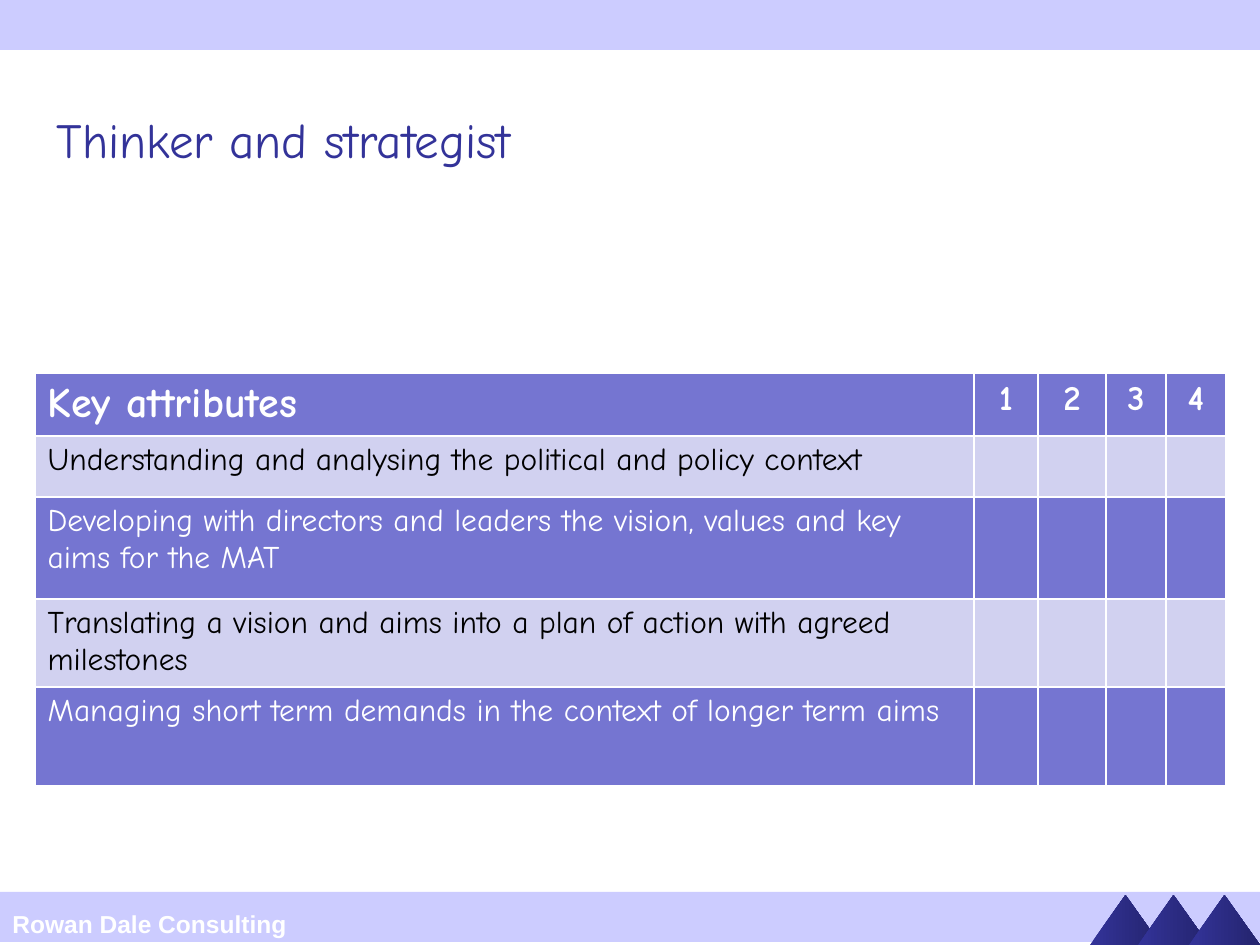
from dataclasses import dataclass

from lxml.etree import SubElement as Sub
from pptx import Presentation as Deck
from pptx.dml.color import RGBColor as Rgb
from pptx.enum.shapes import MSO_SHAPE as Kind
from pptx.enum.text import MSO_ANCHOR as Anchor, MSO_AUTO_SIZE as Fit, PP_ALIGN as Align
from pptx.oxml.ns import qn
from pptx.util import Pt

PX = 914400 / 126


@dataclass(frozen=True)
class Theme:
    white: str = "FFFFFF"
    black: str = "000000"
    navy: str = "333399"
    deep: str = "24246D"
    band: str = "CCCCFF"
    dark: str = "7575D1"
    pale: str = "D1D1F0"
    face: str = "Comic Neue"
    plain: str = "Arial"
    title: int = 28
    head: int = 24
    mark: int = 20
    body: int = 18
    foot: int = 14


LOOK = Theme()
COLS = [939, 64, 68, 60, 60]
ROWS = [60, 61, 102, 85, 99]
MARKS = ["1", "2", "3", "4"]
ITEMS = [
    "Understanding and analysing the political and policy context",
    "Developing with directors and leaders the vision, values and key aims for the MAT",
    "Translating a vision and aims into a plan of action with agreed milestones",
    "Managing short term demands in the context of longer term aims",
]


def px(n):
    return round(n * PX)


def box(*nums):
    return [px(n) for n in nums]


def put(obj, vals):
    for key, val in vals.items():
        setattr(obj, key, val)


def write(frame, text, size, tint, face=LOOK.face, bold=False, align=Align.LEFT):
    para = frame.paragraphs[0]
    para.alignment = align
    run = para.add_run()
    run.text = text
    put(run.font, {"name": face, "size": Pt(size), "bold": bold})
    run.font.color.rgb = Rgb.from_string(tint)


def add_shape(slide, kind, *area):
    shape = slide.shapes.add_shape(kind, *box(*area))
    shape.shadow.inherit = False
    shape.line.fill.background()
    return shape


def add_band(slide, top):
    fill = add_shape(slide, Kind.RECTANGLE, 0, top, 1260, 50).fill
    fill.solid()
    fill.fore_color.rgb = Rgb.from_string(LOOK.band)


def add_peak(slide, left):
    fill = add_shape(slide, Kind.ISOSCELES_TRIANGLE, left, 895, 71, 50).fill
    fill.gradient()
    fill.gradient_angle = 0
    for stop, tint in zip(fill.gradient_stops, (LOOK.navy, LOOK.deep)):
        stop.color.rgb = Rgb.from_string(tint)


def add_foot(slide, text):
    frame = slide.shapes.add_textbox(*box(0, 903, 358, 42)).text_frame
    frame.word_wrap = True
    write(frame, text, LOOK.foot, LOOK.white, LOOK.plain, True)


def set_title(slide, text):
    shape = slide.shapes.title
    put(shape, dict(zip(("left", "top", "width", "height"), box(44, 76, 1216, 125))))
    frame = shape.text_frame
    put(frame, {"auto_size": Fit.NONE, "word_wrap": True, "vertical_anchor": Anchor.MIDDLE})
    write(frame, text, LOOK.title, LOOK.navy)


def edge(cell, sides):
    props = cell._tc.get_or_add_tcPr()
    for side, width in sides.items():
        line = Sub(props, qn(f"a:ln{side}"), w=str(Pt(width)))
        Sub(Sub(line, qn("a:solidFill")), qn("a:srgbClr"), val=LOOK.white)


def add_grid(slide):
    grid = slide.shapes.add_table(
        len(ROWS), len(COLS), *box(35, 373, sum(COLS), sum(ROWS))
    ).table
    for col, wide in zip(grid.columns, COLS):
        col.width = px(wide)
    last = len(ROWS) - 1
    for r, tall in enumerate(ROWS):
        grid.rows[r].height = px(tall)
        for cell in grid.rows[r].cells:
            edge(cell, {"L": 1, "R": 1, "T": 1.5 if r else 1, "B": 1.5 if r < last else 1})
            cell.fill.solid()
            cell.fill.fore_color.rgb = Rgb.from_string(LOOK.pale if r % 2 else LOOK.dark)
    write(grid.cell(0, 0).text_frame, "Key attributes", LOOK.head, LOOK.white, bold=True)
    for c, mark in enumerate(MARKS, 1):
        frame = grid.cell(0, c).text_frame
        write(frame, mark, LOOK.mark, LOOK.white, bold=True, align=Align.CENTER)
    for r, item in enumerate(ITEMS, 1):
        tint = LOOK.black if r % 2 else LOOK.white
        write(grid.cell(r, 0).text_frame, item, LOOK.body, tint)


def main():
    deck = Deck()
    put(deck, {"slide_width": px(1260), "slide_height": px(945)})
    slide = deck.slides.add_slide(deck.slide_layouts[5])
    add_band(slide, 892)
    for left in (1090, 1138, 1189):
        add_peak(slide, left)
    add_foot(slide, "Rowan Dale Consulting")
    add_band(slide, 0)
    set_title(slide, "Thinker and strategist")
    add_grid(slide)
    deck.save("out.pptx")


if __name__ == "__main__":
    main()
